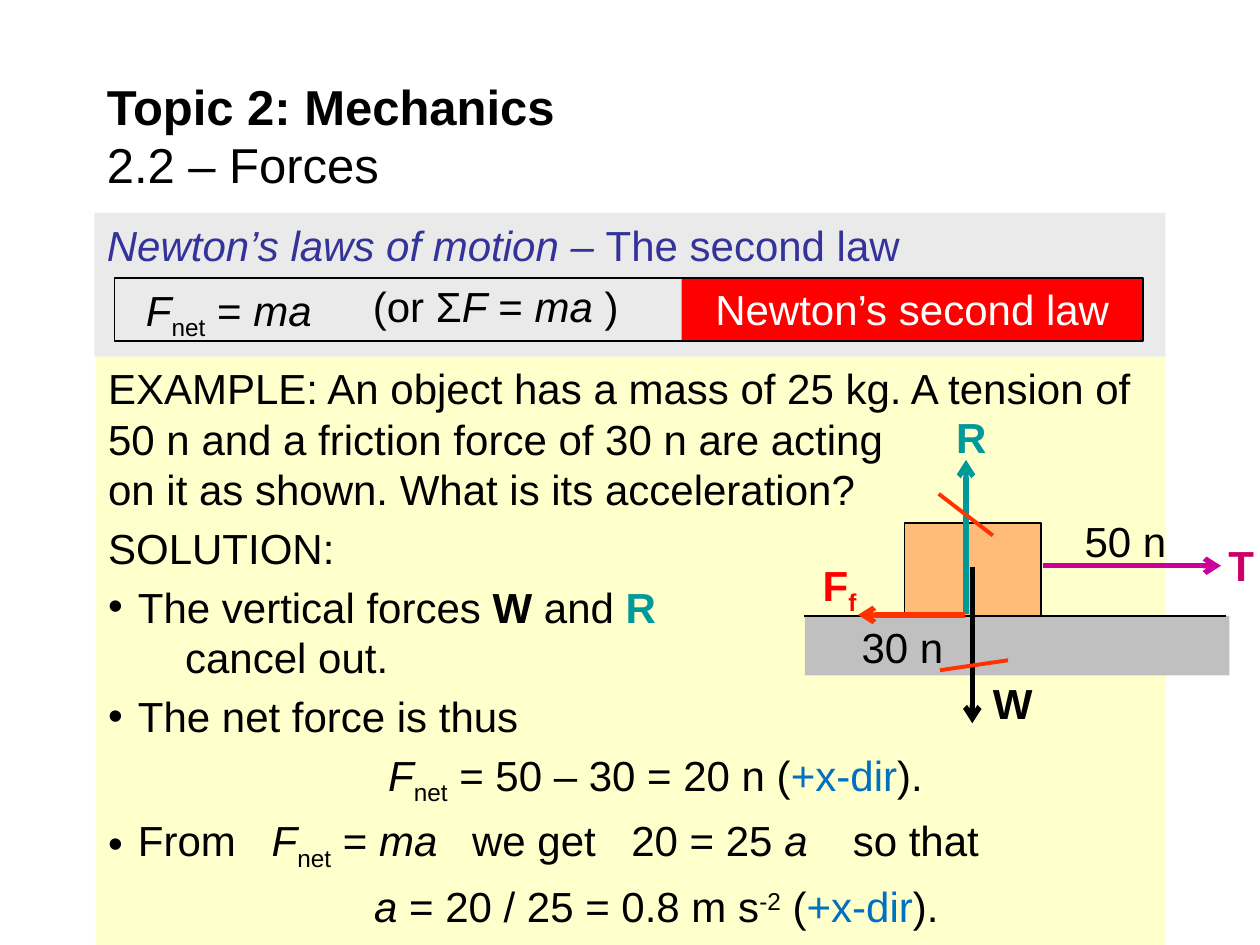
from pptx import Presentation
from pptx.dml.color import RGBColor
from pptx.enum.shapes import MSO_CONNECTOR, MSO_SHAPE
from pptx.enum.text import MSO_ANCHOR, PP_ALIGN
from pptx.oxml.ns import qn
from pptx.util import Pt
from lxml.etree import SubElement

BLACK = RGBColor(0x00, 0x00, 0x00)
WHITE = RGBColor(0xFF, 0xFF, 0xFF)
NAVY = RGBColor(0x33, 0x33, 0x99)
TEAL = RGBColor(0x00, 0x99, 0x99)
BLUE = RGBColor(0x00, 0x70, 0xC0)
RED = RGBColor(0xFF, 0x00, 0x00)
ORANGE_RED = RGBColor(0xFF, 0x33, 0x00)
MAGENTA = RGBColor(0xCC, 0x00, 0x99)
PINK = RGBColor(0xCC, 0x00, 0x66)
PALE_GRAY = RGBColor(0xEA, 0xEA, 0xEA)
GRAY = RGBColor(0xC0, 0xC0, 0xC0)
YELLOW = RGBColor(0xFF, 0xFF, 0xCC)
PEACH = RGBColor(0xFF, 0xBC, 0x79)

prs = Presentation()
prs.slide_width, prs.slide_height = Pt(720), Pt(540)
slide = prs.slides.add_slide(prs.slide_layouts[6])
shapes = slide.shapes


def add_runs(paragraph, runs, color=BLACK, size=24):
    """Add (text, style, color) runs; style letters: b, i, _ (sub), ^ (super)."""
    for text, style, *own_color in runs:
        run = paragraph.add_run()
        run.text = text
        font = run.font
        font.name, font.size = "Arial", Pt(size)
        font.bold, font.italic = "b" in style, "i" in style
        font.color.rgb = own_color[0] if own_color else color
        if "_" in style or "^" in style:
            offset = "-25000" if "_" in style else "30000"
            run._r.get_or_add_rPr().set("baseline", offset)


def add_line(x1, y1, x2, y2, color, width, arrow=False):
    line = shapes.add_connector(MSO_CONNECTOR.STRAIGHT, Pt(x1), Pt(y1), Pt(x2), Pt(y2))
    line.line.color.rgb, line.line.width = color, Pt(width)
    if arrow:
        SubElement(line.line._get_or_add_ln(), qn("a:tailEnd"), type="arrow")
    SubElement(line._element.spPr, qn("a:effectLst"))


# Panels, ground, block and formula frame: place, fill, outline width
panels = []
for left, top, width, height, fill, outline in (
    (54, 121.7, 612, 82.1, PALE_GRAY, 0),
    (54.7, 203.8, 611.3, 336.2, YELLOW, 0),
    (460, 352, 242.6, 34, GRAY, 0),
    (517, 298.8, 77.8, 52.8, PEACH, 0.75),
    (389.5, 158.4, 263.5, 36.7, RED, 0),
    (65.5, 159, 587.5, 36, None, 1),
):
    panel = shapes.add_shape(MSO_SHAPE.RECTANGLE, Pt(left), Pt(top), Pt(width), Pt(height))
    panel.shadow.inherit = False
    if fill is None:
        panel.fill.background()
    else:
        panel.fill.solid()
        panel.fill.fore_color.rgb = fill
    if outline:
        panel.line.color.rgb, panel.line.width = BLACK, Pt(outline)
    else:
        panel.line.fill.background()
    panels.append(panel)
law_panel, example_panel, _, _, law_name, _ = panels

# Title
title = shapes.add_textbox(Pt(54), Pt(41.8), Pt(612), Pt(70.6)).text_frame
title.word_wrap, title.vertical_anchor = True, MSO_ANCHOR.MIDDLE
heading = title.paragraphs[0]
add_runs(heading, [("Topic 2: Mechanics", "b")], size=28)
heading.add_line_break()
add_runs(heading, [("2.2 – Forces", "")], size=28)

# Panel headings
law_panel.text_frame.vertical_anchor = MSO_ANCHOR.TOP
law_heading = law_panel.text_frame.paragraphs[0]
law_heading.alignment = PP_ALIGN.LEFT
add_runs(law_heading, [("Newton’s laws of motion – ", "i"), ("The second law", "")], NAVY)
law_name.text_frame.vertical_anchor = MSO_ANCHOR.TOP
law_label = law_name.text_frame.paragraphs[0]
law_label.alignment = PP_ALIGN.CENTER
add_runs(law_label, [("Newton’s second law", "")], WHITE)

# Example and solution: bullet, indent, space before, runs
F_NET = [("F", "i"), ("net", "_")]
DIRECTION = [("+x-dir", "", BLUE), (").", "")]
steps = (
    (False, 0, 0, [("EXAMPLE: An object has a mass of 25 kg. A tension of 50 n and a "
                    "friction force of 30 n are acting\von it as shown. "
                    "What is its acceleration?", "")]),
    (False, 0, 4.8, [("SOLUTION:", "")]),
    (True, 17, 4.8, [("The vertical forces ", ""), ("W", "b"), (" and ", ""),
                     ("R", "b", TEAL)]),
    (False, 44, 0, [("cancel out.", "")]),
    (True, 17, 4.8, [("The net force is thus", "")]),
    (False, 160, 4.8, F_NET + [(" = 50 – 30 = 20 n (", "")] + DIRECTION),
    (True, 17, 4.8, [("From\t", "")] + F_NET + [(" = ", ""), ("ma", "i"),
                     ("\twe get\t20 = 25 ", ""), ("a", "i"), ("\tso that", "")]),
    (False, 152, 4.8, [("a ", "i"), ("= 20 / 25 = 0.8 m s", ""), ("-2", "^"),
                       (" (", "")] + DIRECTION),
)
solution = example_panel.text_frame
solution.vertical_anchor = MSO_ANCHOR.TOP
for number, (bullet, indent, space, runs) in enumerate(steps):
    step = solution.add_paragraph() if number else solution.paragraphs[0]
    step.alignment, step.space_before = PP_ALIGN.LEFT, Pt(space)
    props = step._p.get_or_add_pPr()
    props.set("marL", str(Pt(indent)))
    props.set("indent", str(-Pt(indent) if bullet else 0))
    if bullet:
        SubElement(props, qn("a:buFont"), typeface="Arial")
        SubElement(props, qn("a:buChar"), char="•")
    if any("\t" in run[0] for run in runs):
        stops = SubElement(props, qn("a:tabLst"))
        for stop in (93.5, 208, 299, 425.5):
            SubElement(stops, qn("a:tab"), pos=str(Pt(stop)), algn="l")
    for text, *look in runs:
        for part, piece in enumerate(text.split("\v")):
            if part:
                step.add_line_break()
            add_runs(step, [(piece, *look)])

# Force diagram
add_line(459.4, 352, 700.6, 352, BLACK, 0.75)
for x1, y1, x2, y2, color in (
    (596.2, 323.3, 697.7, 323.3, MAGENTA),
    (555.6, 324, 555.6, 413.3, BLACK),
    (552, 350.6, 552, 262.8, TEAL),
    (551.5, 351.4, 490.3, 351.4, ORANGE_RED),
):
    add_line(x1, y1, x2, y2, color, 3, arrow=True)

# Strokes that cancel the vertical forces
add_line(536.4, 282.2, 567.4, 306, ORANGE_RED, 2.25)
add_line(537.1, 383, 576, 377.3, ORANGE_RED, 2.25)

# Force labels and formulas
for left, top, width, runs in (
    (694.8, 304.6, 37.4, [("T", "b", PINK)]),
    (560.2, 383.8, 37.4, [("W", "b")]),
    (539.3, 231.8, 32.4, [("R", "b", TEAL)]),
    (463, 316.1, 34.6, [("F", "b", RED), ("f", "b_", RED)]),
    (612.7, 290.9, 61.9, [("50 n", "")]),
    (485.3, 351.4, 61.9, [("30 n", "")]),
    (76.3, 159, 195, F_NET + [(" = ", ""), ("ma", "i")]),
    (206, 156.5, 177, [("(or Σ", ""), ("F ", "i"), ("= ", ""), ("ma ", "i"), (")", "")]),
):
    label = shapes.add_textbox(Pt(left), Pt(top), Pt(width), Pt(36.5)).text_frame
    label.word_wrap = width > 100
    add_runs(label.paragraphs[0], runs)

prs.save("out.pptx")
